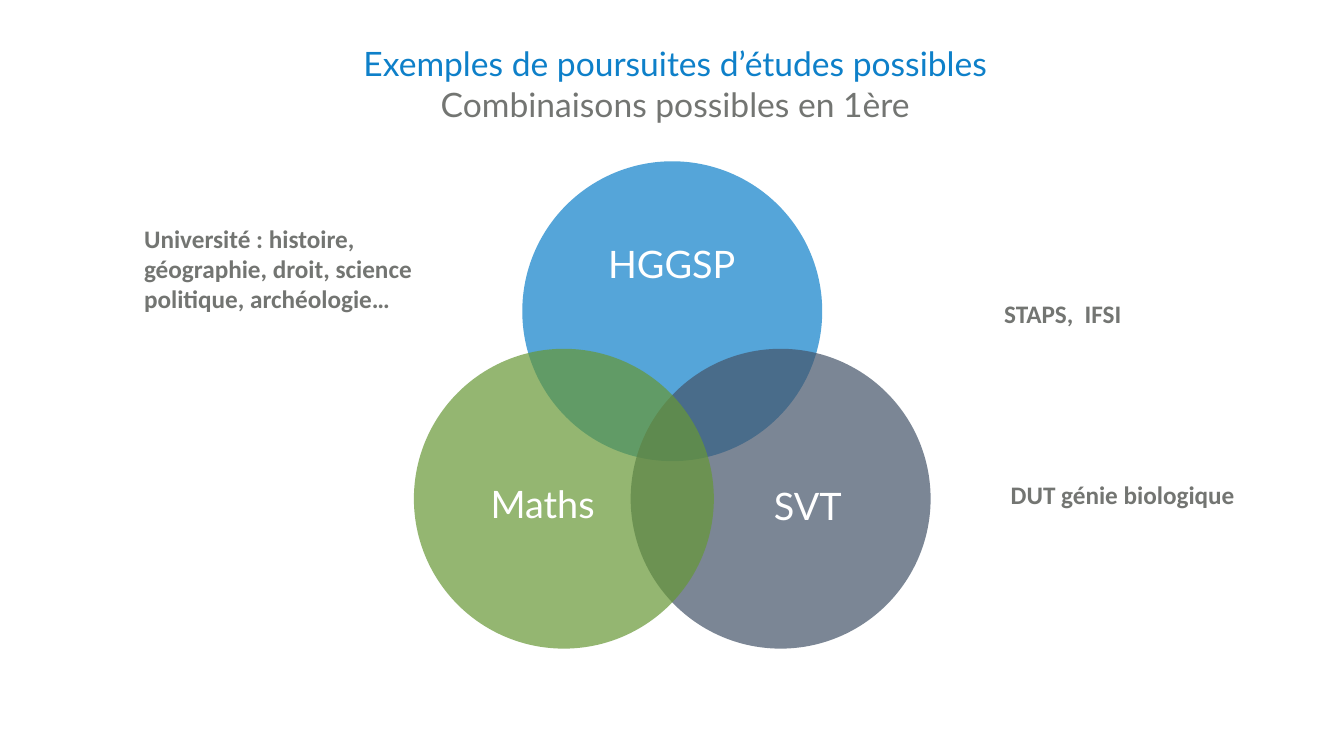
from lxml import etree
from pptx import Presentation
from pptx import util as u
from pptx.dml.color import RGBColor
from pptx.enum import shapes, text
from pptx.oxml import ns

PX = 9144  # EMU per px, 100 px to the inch
SLIDE = (2666, 1500)
COLOURS = {"blue": "0E80C9", "slate": "445469", "green": "679836",
           "grey": "737572", "white": "FFFFFF"}
DIAMETER = 595
OPACITY = 70

# left, top, colour
CIRCLES = [(1036, 320, "blue"), (1251, 692, "slate"), (821, 692, "green")]

# left, top, text
SUBJECTS = [(1175, 473, "HGGSP"), (919, 949, "Maths"), (1445, 952, "SVT")]
SUBJECT_SIZE = (315, 101)

TITLE_AREA = (684, 81, 1311, 172)
TITLE = [("Exemples de poursuites d’études possibles", "blue"),
         ("Combinaisons possibles en 1ère", "grey")]

# area, wraps, text
STUDIES = [
    ((276, 438, 643, 192), True,
     "Université : histoire, géographie, droit, science politique, archéologie…"),
    ((1982, 586, 254, 71), False, "STAPS,  IFSI"),
    ((1995, 946, 468, 71), False, "DUT génie biologique"),
]


def emu(lengths):
    return [length * PX for length in lengths]


def rgb(name):
    return RGBColor.from_string(COLOURS[name])


def add_circle(slide, left, top, colour):
    circle = slide.shapes.add_shape(
        shapes.MSO_SHAPE.OVAL, *emu((left, top, DIAMETER, DIAMETER)))
    circle.shadow.inherit = False
    circle.line.fill.background()
    circle.fill.solid()
    circle.fill.fore_color.rgb = rgb(colour)
    shade = circle.fill._xPr.find(".//" + ns.qn("a:srgbClr"))
    etree.SubElement(shade, ns.qn("a:alpha"), val=str(OPACITY * 1000))


def add_text(slide, area, lines, font, size, bold=False, centred=True, wraps=True):
    """Add a text box with one paragraph for each (wording, colour) line."""
    box = slide.shapes.add_textbox(*emu(area))
    frame = box.text_frame
    frame.word_wrap = wraps
    frame.auto_size = text.MSO_AUTO_SIZE.SHAPE_TO_FIT_TEXT
    frame.text = "\n".join(wording for wording, _ in lines)
    for para, (_, colour) in zip(frame.paragraphs, lines):
        para.alignment = text.PP_ALIGN.CENTER if centred else text.PP_ALIGN.LEFT
        for span in para.runs:
            span.font.name = font
            span.font.size = u.Pt(size)
            span.font.bold = bold
            span.font.color.rgb = rgb(colour)


def main():
    deck = Presentation()
    deck.slide_width, deck.slide_height = emu(SLIDE)
    slide = deck.slides.add_slide(deck.slide_layouts[6])
    for left, top, colour in CIRCLES:
        add_circle(slide, left, top, colour)
    for left, top, subject in SUBJECTS:
        add_text(slide, (left, top, *SUBJECT_SIZE), [(subject, "white")], "Lato", 54)
    add_text(slide, TITLE_AREA, TITLE, "Lato", 48)
    for area, wraps, wording in STUDIES:
        add_text(slide, area, [(wording, "grey")], "Calibri", 36,
                 bold=True, centred=False, wraps=wraps)
    deck.save("out.pptx")


if __name__ == "__main__":
    main()
